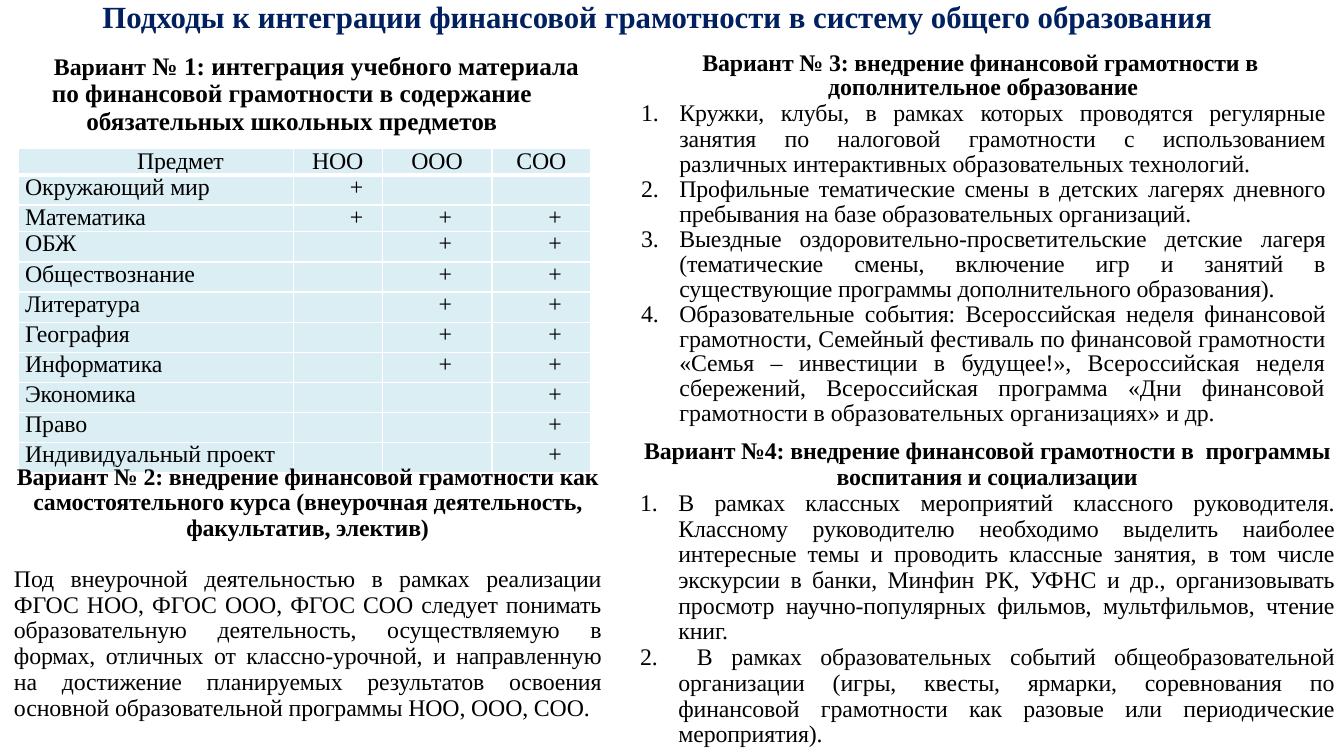
from lxml.etree import SubElement
from pptx import Presentation
from pptx.dml.color import RGBColor
from pptx.enum.text import MSO_ANCHOR, MSO_AUTO_SIZE, PP_ALIGN
from pptx.oxml import parse_xml
from pptx.oxml.ns import nsdecls, qn
from pptx.util import Inches, Pt

NAVY = RGBColor(0x00, 0x20, 0x60)
BLACK = RGBColor(0x00, 0x00, 0x00)
PALE_BLUE = RGBColor(0xDB, 0xEE, 0xF4)
WHITE = RGBColor(0xFF, 0xFF, 0xFF)
FONT = "Times New Roman"
BODY_SIZE = 17
FIRST_LINE = 0.49
HANGING = 0.38

LEVELS = ["Предмет", "НОО", "ООО", "СОО"]
SUBJECTS = [
    ("Окружающий мир", "+", "", ""),
    ("Математика", "+", "+", "+"),
    ("ОБЖ", "", "+", "+"),
    ("Обществознание", "", "+", "+"),
    ("Литература", "", "+", "+"),
    ("География", "", "+", "+"),
    ("Информатика", "", "+", "+"),
    ("Экономика", "", "", "+"),
    ("Право", "", "", "+"),
    ("Индивидуальный проект", "", "", "+"),
]
COLUMN_WIDTHS = [2.73, 0.88, 1.09, 0.98]
TABLE_HEIGHT = 2.92

COURSE_HEADING = ("Вариант № 2: внедрение финансовой грамотности как самостоятельного курса "
                  "(внеурочная деятельность, факультатив, электив)")
COURSE_BODY = ("Под внеурочной деятельностью в рамках реализации ФГОС НОО, ФГОС ООО, ФГОС СОО "
               "следует понимать образовательную деятельность, осуществляемую в формах, отличных "
               "от классно-урочной, и направленную на достижение планируемых результатов освоения "
               "основной образовательной программы НОО, ООО, СОО.")
EXTRA_HEADING = "Вариант № 3: внедрение финансовой грамотности в  дополнительное образование"
EXTRA_ITEMS = [
    (0.9, ["Кружки, клубы, в рамках которых проводятся регулярные занятия по налоговой "
           "грамотности с использованием различных интерактивных образовательных технологий."]),
    (0.87, ["Профильные тематические смены в детских лагерях дневного пребывания на базе "
            "образовательных организаций."]),
    (0.87, ["Выездные оздоровительно-просветительские детские лагеря (тематические смены, "
            "включение игр и занятий в существующие программы дополнительного образования)."]),
    (0.87, ["Образовательные события: Всероссийская неделя финансовой грамотности, Семейный "
            "фестиваль по финансовой грамотности «Семья – инвестиции в будущее!», ",
            "Всероссийская неделя сбережений, Всероссийская программа «Дни финансовой "
            "грамотности в образовательных организациях»",
            " и др."]),
]
UPBRINGING_HEADING = ("Вариант №4: внедрение финансовой грамотности в  программы воспитания "
                      "и социализации")
UPBRINGING_ITEMS = [
    (0.9, ["В рамках классных мероприятий классного руководителя. Классному руководителю "
           "необходимо выделить наиболее интересные темы и проводить классные занятия, в том "
           "числе экскурсии в банки, Минфин РК, УФНС и др., организовывать просмотр "
           "научно-популярных фильмов, мультфильмов, чтение книг."]),
    (0.9, [" В рамках образовательных событий общеобразовательной организации (игры, квесты, "
           "ярмарки, соревнования по финансовой грамотности как разовые или периодические "
           "мероприятия)."]),
]


def add_run(paragraph, text, size=BODY_SIZE, bold=False, color=BLACK, tracking=-10):
    run = paragraph.add_run()
    run.text = text
    run.font.name = FONT
    run.font.size = Pt(size)
    run.font.bold = bold
    run.font.color.rgb = color
    run.font._element.set("spc", str(tracking))


def format_paragraph(paragraph, align, spacing=0.9, left=0, indent=0):
    paragraph.alignment = align
    paragraph.line_spacing = spacing
    paragraph.space_before = Pt(0)
    properties = paragraph._p.get_or_add_pPr()
    properties.set("marL", str(Inches(left)))
    properties.set("indent", str(Inches(indent)))


def add_text_frame(slide, left, top, width, height):
    frame = slide.shapes.add_textbox(
        Inches(left), Inches(top), Inches(width), Inches(height)).text_frame
    frame.word_wrap = True
    frame.auto_size = MSO_AUTO_SIZE.SHAPE_TO_FIT_TEXT
    return frame


def add_section(slide, bounds, heading, heading_spacing=0.9):
    frame = add_text_frame(slide, *bounds)
    paragraph = frame.paragraphs[0]
    format_paragraph(paragraph, PP_ALIGN.CENTER, heading_spacing)
    add_run(paragraph, heading, bold=True)
    return frame


def add_numbered_items(frame, items):
    for spacing, pieces in items:
        paragraph = frame.add_paragraph()
        format_paragraph(paragraph, PP_ALIGN.JUSTIFY, spacing, HANGING, -HANGING)
        SubElement(paragraph._p.get_or_add_pPr(), qn("a:buAutoNum"), type="arabicPeriod")
        for index, piece in enumerate(pieces):
            add_run(paragraph, piece, tracking=0 if index == 1 else -10)


def set_borders(cell, widths):
    properties = cell._tc.get_or_add_tcPr()
    for position, (side, points) in enumerate(widths.items()):
        properties.insert(position, parse_xml(
            f'<a:ln{side} {nsdecls("a")} w="{Pt(points)}"><a:solidFill>'
            f'<a:srgbClr val="{WHITE}"/></a:solidFill></a:ln{side}>'))


def fill_cell(cell, text, row, column):
    header = row == 0
    cell.margin_left = cell.margin_right = Inches(0.07)
    cell.margin_top, cell.margin_bottom = Inches(0.01), 0
    cell.vertical_anchor = MSO_ANCHOR.MIDDLE if header else MSO_ANCHOR.TOP
    cell.fill.solid()
    cell.fill.fore_color.rgb = PALE_BLUE
    set_borders(cell, {"L": 1, "R": 1, "T": 3 if row == 1 else 1, "B": 3 if header else 1})
    paragraph = cell.text_frame.paragraphs[0]
    indented = header == (column == 0)
    format_paragraph(paragraph, PP_ALIGN.CENTER if header else PP_ALIGN.JUSTIFY,
                     indent=FIRST_LINE if indented else 0)
    if text:
        add_run(paragraph, text)
    else:
        SubElement(paragraph._p, qn("a:endParaRPr"), sz=str(BODY_SIZE * 100))


def add_subject_table(slide):
    rows = [LEVELS, *SUBJECTS]
    table = slide.shapes.add_table(
        len(rows), len(LEVELS), Inches(0.18), Inches(1.47),
        Inches(sum(COLUMN_WIDTHS)), Inches(TABLE_HEIGHT)).table
    table.first_row = False
    table.horz_banding = False
    for column, width in zip(table.columns, COLUMN_WIDTHS):
        column.width = Inches(width)
    for row, texts in enumerate(rows):
        table.rows[row].height = Inches(TABLE_HEIGHT / len(rows))
        for column, text in enumerate(texts):
            fill_cell(table.cell(row, column), text, row, column)


def set_title(slide):
    title = slide.shapes.title
    title.left, title.top = Inches(0.15), Inches(-0.05)
    title.width, title.height = Inches(12.81), Inches(0.46)
    frame = title.text_frame
    frame.word_wrap = True
    frame.auto_size = MSO_AUTO_SIZE.NONE
    frame.vertical_anchor = MSO_ANCHOR.MIDDLE
    format_paragraph(frame.paragraphs[0], PP_ALIGN.CENTER)
    add_run(frame.paragraphs[0],
            "Подходы к интеграции финансовой грамотности в систему общего образования ",
            size=22, bold=True, color=NAVY, tracking=0)


def add_subjects_heading(slide):
    frame = add_text_frame(slide, -0.07, 0.48, 5.93, 0.92)
    frame.vertical_anchor = MSO_ANCHOR.MIDDLE
    heading = frame.paragraphs[0]
    format_paragraph(heading, PP_ALIGN.CENTER, indent=FIRST_LINE)
    add_run(heading, "Вариант", bold=True, tracking=0)
    add_run(heading, " № 1: интеграция учебного материала по финансовой грамотности "
            "в содержание обязательных школьных предметов", size=18, bold=True, tracking=0)


def main():
    presentation = Presentation()
    presentation.slide_width, presentation.slide_height = Inches(13.33), Inches(7.5)
    slide = presentation.slides.add_slide(presentation.slide_layouts[5])
    set_title(slide)
    add_subject_table(slide)
    add_subjects_heading(slide)

    course = add_section(slide, (0.04, 4.56, 6.02, 2.68), COURSE_HEADING)
    description = course.add_paragraph()
    format_paragraph(description, PP_ALIGN.JUSTIFY)
    description.space_before = Pt(18)
    add_run(description, COURSE_BODY)

    extra = add_section(slide, (6.26, 0.46, 6.98, 3.86), EXTRA_HEADING, 0.87)
    add_numbered_items(extra, EXTRA_ITEMS)
    upbringing = add_section(slide, (6.25, 4.31, 7.08, 3.19), UPBRINGING_HEADING)
    add_numbered_items(upbringing, UPBRINGING_ITEMS)
    presentation.save("out.pptx")


if __name__ == "__main__":
    main()
